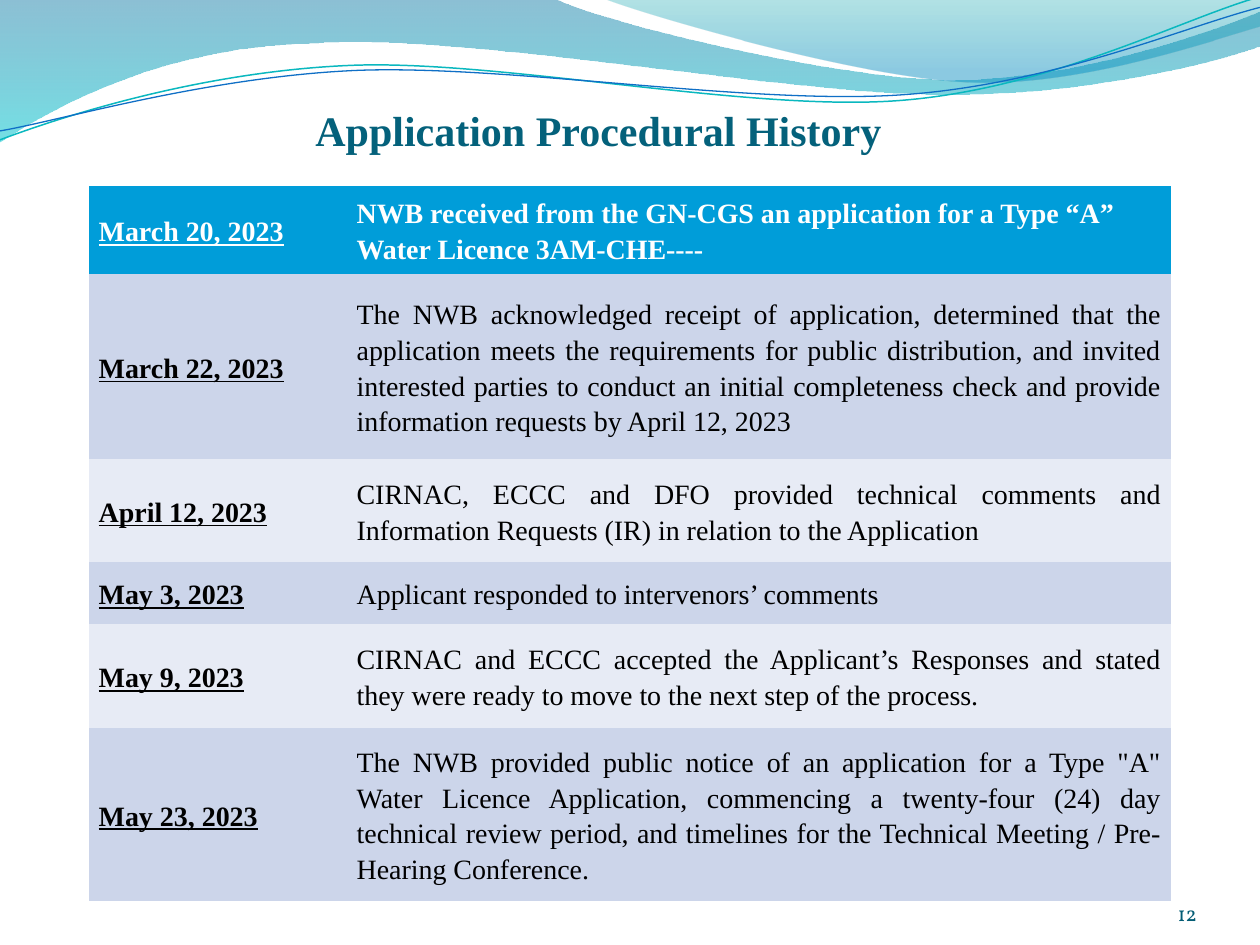
from typing import NamedTuple

from lxml.etree import SubElement
from pptx import Presentation
from pptx.dml.color import RGBColor
from pptx.enum.text import MSO_ANCHOR, MSO_AUTO_SIZE, PP_ALIGN
from pptx.oxml.ns import qn
from pptx.util import Cm, Pt

WHITE = RGBColor(0xFF, 0xFF, 0xFF)
BLACK = RGBColor(0x00, 0x00, 0x00)
TITLE_TEAL = RGBColor(0x04, 0x61, 0x7B)
NUMBER_TEAL = RGBColor(0x04, 0x5D, 0x75)
HEADER_BLUE = RGBColor(0x00, 0x9D, 0xD9)
BAND_DARK = RGBColor(0xCC, 0xD5, 0xEA)
BAND_LIGHT = RGBColor(0xE7, 0xEB, 0xF5)
LINE_TEAL = RGBColor(0x0A, 0xB8, 0xBF)
LINE_BLUE = RGBColor(0x0F, 0x6F, 0xC6)
DEEP_BLUE = RGBColor(0x00, 0x74, 0xA1)
CYAN = RGBColor(0x00, 0xC6, 0xCF)
SEA_GREEN = RGBColor(0x00, 0xA1, 0xA9)
SKY_BLUE = RGBColor(0x00, 0x8B, 0xBF)

BODY_FONT = "Times New Roman"
NO_GRID_STYLE = "{2D5ABB26-0587-4C30-8999-92F81FD0307C}"


class Stop(NamedTuple):
    position: int
    color: RGBColor
    opacity: int


class Wave(NamedTuple):
    """Points in cm; a segment has one point (straight) or three (Bézier)."""
    start: tuple
    segments: list
    stops: tuple = ()
    line_color: RGBColor | None = None
    line_width: float = 0


class Event(NamedTuple):
    date: str
    description: str
    height: float


WAVES = [
    Wave((0, 0), [
        [(11.18, -0.03)],
        [(12.09, 0.43), (16.87, 1.6), (19.25, 1.6)],
        [(21.67, 1.6), (24.33, 0.66), (25.4, 0.23)],
        [(25.43, 0.91)],
        [(24.97, 1.12), (22.1, 1.93), (18.95, 1.9)],
        [(15.8, 1.9), (9.7, 0.71), (6.53, 0.86)],
        [(3.28, 0.91), (1.17, 2.11), (-0.03, 2.87)],
    ], stops=(Stop(0, DEEP_BLUE, 45), Stop(100, CYAN, 55))),
    Wave((12.17, -0.03), [
        [(12.93, 0.28), (17.32, 1.57), (19.53, 1.65)],
        [(21.74, 1.75), (24.41, 0.81), (25.4, 0.53)],
        [(25.4, 0)],
    ], stops=(Stop(0, SEA_GREEN, 30), Stop(80, SKY_BLUE, 45))),
    Wave((0, 2.82), [
        [(1.22, 2.36), (4.01, 1.45), (7.04, 1.32)],
        [(10.03, 1.19), (15.06, 2.26), (18.11, 2.03)],
        [(21.16, 1.8), (23.83, 0.38), (25.35, -0.05)],
    ], line_color=LINE_TEAL, line_width=0.85),
    Wave((0, 2.64), [
        [(1.19, 2.44), (4.17, 1.55), (7.19, 1.42)],
        [(10.24, 1.3), (15.16, 2.13), (18.21, 1.91)],
        [(21.23, 1.7), (23.9, 0.53), (25.4, 0.15)],
    ], line_color=LINE_BLUE, line_width=0.75),
]

EVENTS = [
    Event("March 20, 2023",
          "NWB received from the GN-CGS an application for a Type “A” Water Licence "
          "3AM-CHE----", 1.77),
    Event("March 22, 2023",
          "The NWB acknowledged receipt of application, determined that the application "
          "meets the requirements for public distribution, and invited interested parties "
          "to conduct an initial completeness check and provide information requests by "
          "April 12, 2023", 3.73),
    Event("April 12, 2023",
          "CIRNAC, ECCC and DFO provided technical comments and Information Requests (IR) "
          "in relation to the Application", 2.08),
    Event("May 3, 2023", "Applicant responded to intervenors’ comments", 1.25),
    Event("May 9, 2023",
          "CIRNAC and ECCC accepted the Applicant’s Responses and stated they were ready "
          "to move to the next step of the process.", 2.09),
    Event("May 23, 2023",
          "The NWB provided public notice of an application for a Type \"A\" Water Licence "
          "Application, commencing a twenty-four (24) day technical review period, and "
          "timelines for the Technical Meeting / Pre-Hearing Conference.", 3.49),
]


def write_text(frame, text: str, *, size: float, color: RGBColor, font: str = BODY_FONT,
               bold: bool = False, underline: bool = False, align=PP_ALIGN.LEFT,
               line_spacing: float = 1.0, space_after: float = 0) -> None:
    paragraph = frame.paragraphs[0]
    paragraph.alignment = align
    paragraph.line_spacing = line_spacing
    paragraph.space_before = Pt(0)
    paragraph.space_after = Pt(space_after)
    run = paragraph.add_run()
    run.text = text
    run.font.name = font
    run.font.size = Pt(size)
    run.font.bold = bold
    run.font.underline = underline
    run.font.color.rgb = color


def set_frame(frame, top_inset: float = 0) -> None:
    """Anchor the text at the bottom, with no inset but the one at the top."""
    frame.word_wrap = True
    frame.auto_size = MSO_AUTO_SIZE.NONE
    frame.vertical_anchor = MSO_ANCHOR.BOTTOM
    frame.margin_left = frame.margin_right = frame.margin_bottom = 0
    frame.margin_top = Cm(top_inset)


def bend_segments(shape, segments: list) -> None:
    """Join each three straight steps of a Bézier segment into one curve."""
    steps = iter(list(shape.element.iter(qn("a:lnTo"))))
    for segment in segments:
        first, *others = [next(steps) for _ in segment]
        if others:
            first.tag = qn("a:cubicBezTo")
        for step in others:
            first.append(step[0])
            step.getparent().remove(step)


def fill_gradient(shape, stops: tuple) -> None:
    """Fill from top to bottom with partly transparent colours."""
    shape.fill.gradient()
    gradient = shape.element.spPr.find(qn("a:gradFill"))
    for child in list(gradient):
        gradient.remove(child)
    stop_list = SubElement(gradient, qn("a:gsLst"))
    for stop in stops:
        entry = SubElement(stop_list, qn("a:gs"), pos=str(stop.position * 1000))
        color = SubElement(entry, qn("a:srgbClr"), val=str(stop.color))
        SubElement(color, qn("a:alpha"), val=str(stop.opacity * 1000))
    SubElement(gradient, qn("a:lin"), ang="5400000", scaled="0")


def draw_wave(slide, wave: Wave) -> None:
    points = [wave.start] + [point for segment in wave.segments for point in segment]
    start, *others = [(Cm(x), Cm(y)) for x, y in points]
    builder = slide.shapes.build_freeform(*start)
    builder.add_line_segments(others, close=bool(wave.stops))
    shape = builder.convert_to_shape()
    bend_segments(shape, wave.segments)
    shape.shadow.inherit = False
    if wave.stops:
        fill_gradient(shape, wave.stops)
        shape.line.fill.background()
    else:
        shape.fill.background()
        shape.line.color.rgb = wave.line_color
        shape.line.width = Pt(wave.line_width)


def draw_title(slide, text: str) -> None:
    title = slide.shapes.title
    title.left, title.top, title.width, title.height = Cm(0), Cm(0.91), Cm(24.13), Cm(2.21)
    set_frame(title.text_frame, top_inset=0.13)
    write_text(title.text_frame, text, size=24, color=TITLE_TEAL, bold=True,
               align=PP_ALIGN.CENTER)
    title.element.getparent().append(title.element)  # in front of the waves


def draw_history(slide, events: list) -> None:
    frame = slide.shapes.add_table(len(events), 2, Cm(1.8), Cm(3.75), Cm(21.8),
                                   Cm(sum(event.height for event in events)))
    next(frame.element.iter(qn("a:tableStyleId"))).text = NO_GRID_STYLE
    table = frame.table
    table.columns[0].width, table.columns[1].width = Cm(5.2), Cm(16.6)
    for index, event in enumerate(events):
        table.rows[index].height = Cm(event.height)
        is_header = index == 0
        band = HEADER_BLUE if is_header else BAND_DARK if index % 2 else BAND_LIGHT
        for column, text in enumerate((event.date, event.description)):
            is_date = column == 0
            cell = table.cell(index, column)
            cell.fill.solid()
            cell.fill.fore_color.rgb = band
            cell.vertical_anchor = MSO_ANCHOR.MIDDLE
            cell.margin_left = cell.margin_right = Cm(0.19)
            cell.margin_top = cell.margin_bottom = 0
            write_text(cell.text_frame, text, size=16, color=WHITE if is_header else BLACK,
                       bold=is_header or is_date, underline=is_date,
                       align=PP_ALIGN.LEFT if is_header or is_date else PP_ALIGN.JUSTIFY,
                       line_spacing=1.15, space_after=10)


def main() -> None:
    presentation = Presentation()
    presentation.slide_width, presentation.slide_height = Cm(25.4), Cm(19.05)
    slide = presentation.slides.add_slide(presentation.slide_layouts[5])
    for wave in WAVES:
        draw_wave(slide, wave)
    draw_title(slide, "Application Procedural History")
    number = slide.shapes.add_textbox(Cm(22.02), Cm(17.65), Cm(2.11), Cm(1.02))
    set_frame(number.text_frame)
    write_text(number.text_frame, "12", size=12, color=NUMBER_TEAL, font="Vollkorn",
               align=PP_ALIGN.RIGHT)
    draw_history(slide, EVENTS)
    presentation.save("out.pptx")


if __name__ == "__main__":
    main()
